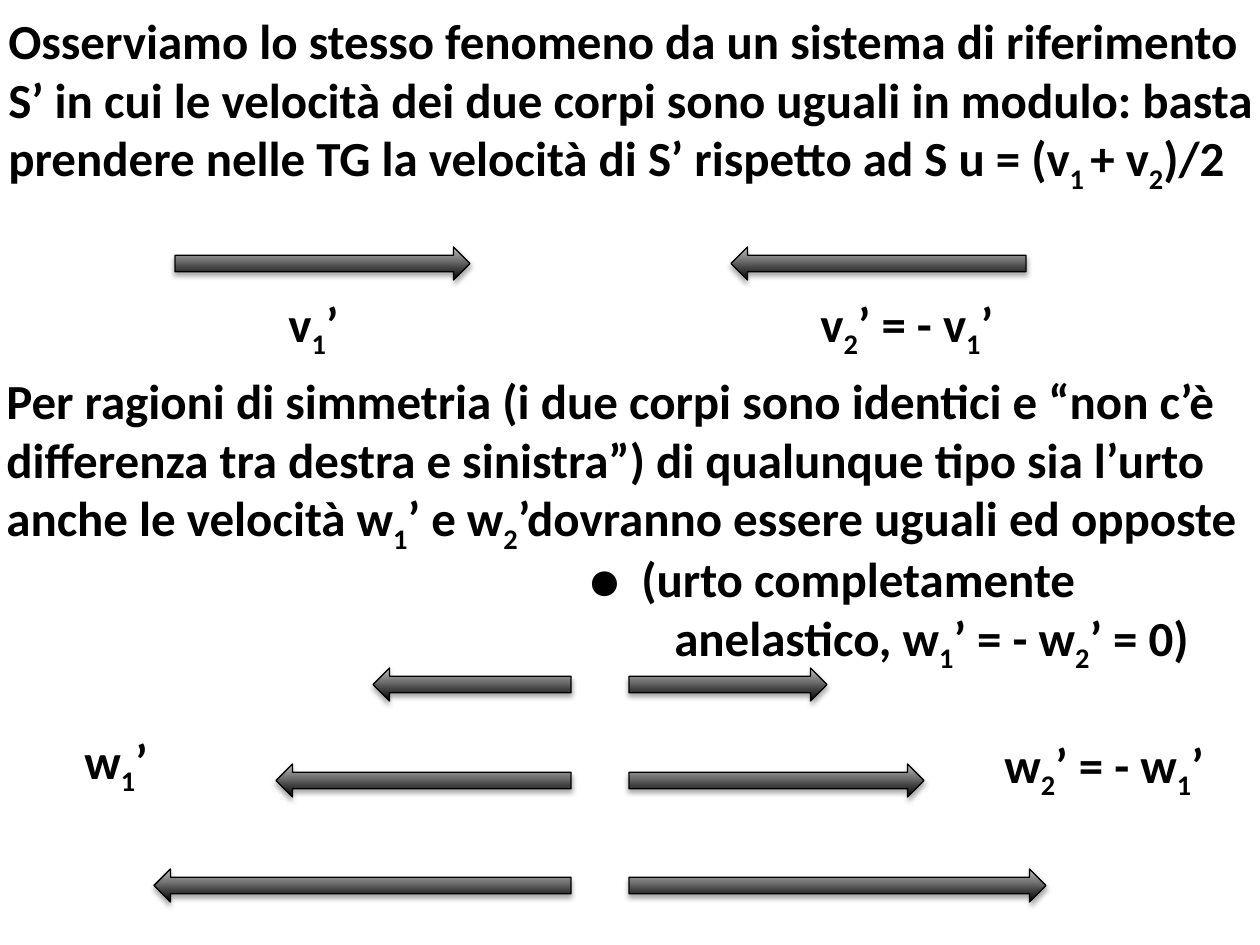
"""Build a slide on a collision seen from the symmetric reference frame."""
from lxml.etree import SubElement
from pptx import Presentation
from pptx.dml.color import RGBColor
from pptx.enum.shapes import MSO_SHAPE as Shape
from pptx.enum.text import MSO_AUTO_SIZE as AutoSize
from pptx.oxml.ns import qn
from pptx.util import Pt

PX = 914400 / 126
BLACK = RGBColor(0x00, 0x00, 0x00)
GREY = RGBColor(0xBD, 0xBD, 0xBD)
FONT = "Calibri"
BODY_SIZE, DOT_SIZE = 28, 96

# Odd chunks between bars are subscripts.
TEXTS = [
    ((-4, 4, 1289, 190), BODY_SIZE, [
        "Osserviamo lo stesso fenomeno da un sistema di riferimento",
        "S’ in cui le velocità dei due corpi sono uguali in modulo: basta",
        "prendere nelle TG la velocità di S’ rispetto ad S u = (v|1 |+ v|2|)/2",
    ]),
    ((276, 287, 78, 72), BODY_SIZE, ["v|1|’"]),
    ((808, 287, 204, 72), BODY_SIZE, ["v|2|’ = - v|1|’"]),
    ((-6, 364, 1303, 190), BODY_SIZE, [
        "Per ragioni di simmetria (i due corpi sono identici e “non c’è",
        "differenza tra destra e sinistra”) di qualunque tipo sia l’urto",
        "anche le velocità w|1|’ e w|2|’dovranno essere uguali ed opposte",
    ]),
    ((570, 421, 87, 217), DOT_SIZE, ["."]),
    ((629, 542, 602, 131), BODY_SIZE, [
        "(urto completamente",
        "anelastico, w|1|’ = - w|2|’ = 0)",
    ]),
    ((72, 724, 165, 72), BODY_SIZE, ["w|1|’"]),
    ((992, 728, 239, 72), BODY_SIZE, ["w|2|’ = - w|1|’"]),
]
INDENTED_LINE, INDENT = "anelastico", 33

ARROW_HEIGHT = 33
INCOMING_TOP, INCOMING_LENGTH = 247, 295
INCOMING_LEFTS = [(175, Shape.RIGHT_ARROW), (731, Shape.LEFT_ARROW)]
OUTGOING_ROWS = [(668, 198), (764, 295), (869, 417)]
LEFT_TAIL, RIGHT_TAIL = 571, 629


def px(value):
    return round(value * PX)


def add_text(slide, box, size, lines):
    frame = slide.shapes.add_textbox(*map(px, box)).text_frame
    frame.word_wrap = False
    frame.auto_size = AutoSize.SHAPE_TO_FIT_TEXT
    for index, line in enumerate(lines):
        paragraph = frame.add_paragraph() if index else frame.paragraphs[0]
        if line.startswith(INDENTED_LINE):
            paragraph._p.get_or_add_pPr().set("marL", str(px(INDENT)))
        for position, chunk in enumerate(line.split("|")):
            run = paragraph.add_run()
            run.text = chunk
            font = run.font
            font.name, font.size, font.bold = FONT, Pt(size), True
            font.color.rgb = BLACK
            if position % 2:
                font._element.set("baseline", "-25000")


def add_shadow(shape):
    shape.shadow.inherit = False
    effects = shape._element.spPr.find(qn("a:effectLst"))
    shadow = SubElement(effects, qn("a:outerShdw"), blurRad=str(Pt(3.1)),
                        dist=str(Pt(1.8)), dir="5400000", rotWithShape="0")
    color = SubElement(shadow, qn("a:srgbClr"), val=str(BLACK))
    SubElement(color, qn("a:alpha"), val="35000")


def add_arrow(slide, kind, left, top, length):
    arrow = slide.shapes.add_shape(kind, *map(px, (left, top, length, ARROW_HEIGHT)))
    arrow.fill.gradient()
    arrow.fill.gradient_angle = 90
    for stop, color in zip(arrow.fill.gradient_stops, (BLACK, GREY)):
        stop.color.rgb = color
    arrow.line.color.rgb = BLACK
    arrow.line.width = Pt(0.75)
    add_shadow(arrow)


def main():
    presentation = Presentation()
    presentation.slide_width, presentation.slide_height = px(1260), px(945)
    slide = presentation.slides.add_slide(presentation.slide_layouts[6])
    for left, kind in INCOMING_LEFTS:
        add_arrow(slide, kind, left, INCOMING_TOP, INCOMING_LENGTH)
    for top, length in OUTGOING_ROWS:
        add_arrow(slide, Shape.LEFT_ARROW, LEFT_TAIL - length, top, length)
        add_arrow(slide, Shape.RIGHT_ARROW, RIGHT_TAIL, top, length)
    for box, size, lines in TEXTS:
        add_text(slide, box, size, lines)
    presentation.save("out.pptx")


if __name__ == "__main__":
    main()
